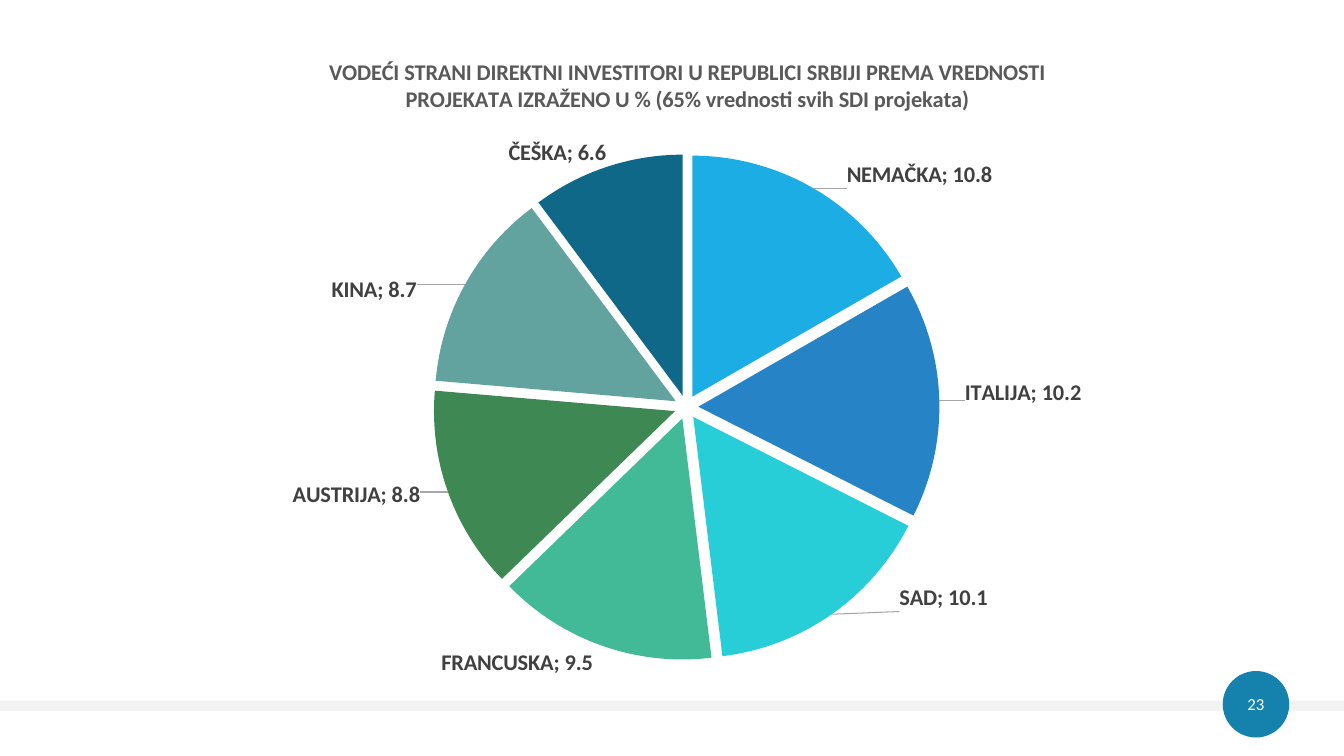
from lxml import etree
from pptx import Presentation
from pptx.chart.data import CategoryChartData
from pptx.dml.color import RGBColor
from pptx.enum.chart import XL_CHART_TYPE, XL_LABEL_POSITION
from pptx.enum.shapes import MSO_SHAPE
from pptx.enum.text import MSO_ANCHOR, PP_ALIGN
from pptx.oxml.ns import qn
from pptx.util import Pt

PIE = XL_CHART_TYPE.PIE
OUTSIDE = XL_LABEL_POSITION.OUTSIDE_END
RECTANGLE, OVAL = MSO_SHAPE.RECTANGLE, MSO_SHAPE.OVAL
MIDDLE, CENTER = MSO_ANCHOR.MIDDLE, PP_ALIGN.CENTER

# Content
HEADING = ("VODEĆI STRANI DIREKTNI INVESTITORI U REPUBLICI SRBIJI PREMA VREDNOSTI "
           "PROJEKATA IZRAŽENO U % (65% vrednosti svih SDI projekata)")
PAGE_NUMBER = "23"
# Country, share, slice colour, label shift in points (right, down)
INVESTORS = [
    ("NEMAČKA", 10.8, "1CADE4", (22, 4)),
    ("ITALIJA", 10.2, "2683C6", (14, -5)),
    ("SAD", 10.1, "27CED7", (46, -25)),
    ("FRANCUSKA", 9.5, "42BA97", (-5, -1)),
    ("AUSTRIJA", 8.8, "3E8853", (-16, -9)),
    ("KINA", 8.7, "62A39F", (-31, 16)),
    ("ČEŠKA", 6.6, "106889", (1, 4)),
]
COLORS = {"band": "F2F2F2", "badge": "1482AC", "number": "FFFFFF",
          "heading": "595959", "label": "404040", "leader": "A6A6A6"}
FONT = "Calibri"
SLIDE_W, SLIDE_H = 960, 540
CHART_X, CHART_Y, CHART_W, CHART_H = 135.4, 20.9, 707, 479.5
EXPLOSION = 5


def style_font(font, size, color, bold=False):
    font.name, font.size, font.bold = FONT, Pt(size), bold
    font.color.rgb = RGBColor.from_string(color)


def add_flat_shape(slide, kind, x, y, w, h, color):
    shape = slide.shapes.add_shape(kind, Pt(x), Pt(y), Pt(w), Pt(h))
    shape.shadow.inherit = False
    shape.fill.solid()
    shape.fill.fore_color.rgb = RGBColor.from_string(color)
    shape.line.fill.background()
    return shape


def chart_element(tag, **attributes):
    return etree.Element(qn("c:" + tag), attributes)


def manual_layout(**settings):
    layout = chart_element("layout")
    manual = etree.SubElement(layout, qn("c:manualLayout"))
    for tag, value in settings.items():
        manual.append(chart_element(tag, val=str(value)))
    return layout


def show_country_and_share(labels):
    for tag, value in (("showVal", "1"), ("showCatName", "1"), ("showPercent", "0"),
                       ("showSerName", "0"), ("showLegendKey", "0")):
        labels.find(qn("c:" + tag)).set("val", value)
    separator = chart_element("separator")
    separator.text = "; "
    labels.find(qn("c:showBubbleSize" if labels.find(qn("c:showBubbleSize")) is not None
                   else "c:showPercent")).addnext(separator)


prs = Presentation()
prs.slide_width, prs.slide_height = Pt(SLIDE_W), Pt(SLIDE_H)
slide = prs.slides.add_slide(prs.slide_layouts[6])

# Footer band and page number
add_flat_shape(slide, RECTANGLE, 0, 500.4, SLIDE_W, 7.2, COLORS["band"])
badge = add_flat_shape(slide, OVAL, 873.4, 479.3, 47.5, 47.5, COLORS["badge"])
frame = badge.text_frame
frame.margin_left = frame.margin_right = frame.margin_top = frame.margin_bottom = 0
frame.vertical_anchor = MIDDLE
frame.paragraphs[0].alignment = CENTER
number = frame.paragraphs[0].add_run()
number.text = PAGE_NUMBER
style_font(number.font, 12, COLORS["number"])

# Pie chart
data = CategoryChartData()
data.categories = [country for country, *_ in INVESTORS]
data.add_series("Series 1", [share for _, share, *_ in INVESTORS])
chart = slide.shapes.add_chart(PIE, Pt(CHART_X), Pt(CHART_Y), Pt(CHART_W),
                               Pt(CHART_H), data).chart
style_font(chart.font, 10, "000000")
chart.has_legend = False
plot = chart.plots[0]
plot.vary_by_categories = True
plot_area = chart.element.find(".//" + qn("c:plotArea"))
for old_layout in plot_area.findall(qn("c:layout")):
    plot_area.remove(old_layout)
plot_area.insert(0, manual_layout(layoutTarget="inner", xMode="edge", yMode="edge",
                                  x=0.246, y=0.186, w=0.512, h=0.754))

# Chart heading
chart.has_title = True
heading = chart.chart_title.text_frame.paragraphs[0].add_run()
heading.text = HEADING
style_font(heading.font, 16, COLORS["heading"], bold=True)
title = chart.element.find(".//" + qn("c:title"))
for old_layout in title.findall(qn("c:layout")):
    title.remove(old_layout)
title.find(qn("c:tx")).addnext(manual_layout(xMode="edge", yMode="edge", x=0.137, y=0.035))

# Labels shared by the whole pie, with leader lines
pie = plot.series[0]
labels = pie.data_labels
style_font(labels.font, 16, COLORS["label"], bold=True)
labels.position = OUTSIDE
all_labels = pie.data_labels._element
show_country_and_share(all_labels)
for old_leader in all_labels.findall(qn("c:showLeaderLines")):
    all_labels.remove(old_leader)
all_labels.append(chart_element("showLeaderLines", val="1"))
leader = etree.SubElement(all_labels, qn("c:leaderLines"))
line = etree.SubElement(etree.SubElement(leader, qn("c:spPr")), qn("a:ln"), w="9525")
line_fill = etree.SubElement(line, qn("a:solidFill"))
etree.SubElement(line_fill, qn("a:srgbClr"), val=COLORS["leader"])

# Slices and their shifted labels
for index, (country, share, color, (right, down)) in enumerate(INVESTORS):
    point = pie.points[index]
    point.format.fill.solid()
    point.format.fill.fore_color.rgb = RGBColor.from_string(color)
    style_font(point.data_label.font, 16, COLORS["label"], bold=True)
    point.data_label.position = OUTSIDE
    label = all_labels.findall(qn("c:dLbl"))[index]
    label.insert(1, manual_layout(x=round(right / CHART_W, 4), y=round(down / CHART_H, 4)))
    show_country_and_share(label)

# Gap between slices
pie._element.find(qn("c:dPt")).addprevious(chart_element("explosion", val=str(EXPLOSION)))

prs.save("out.pptx")
